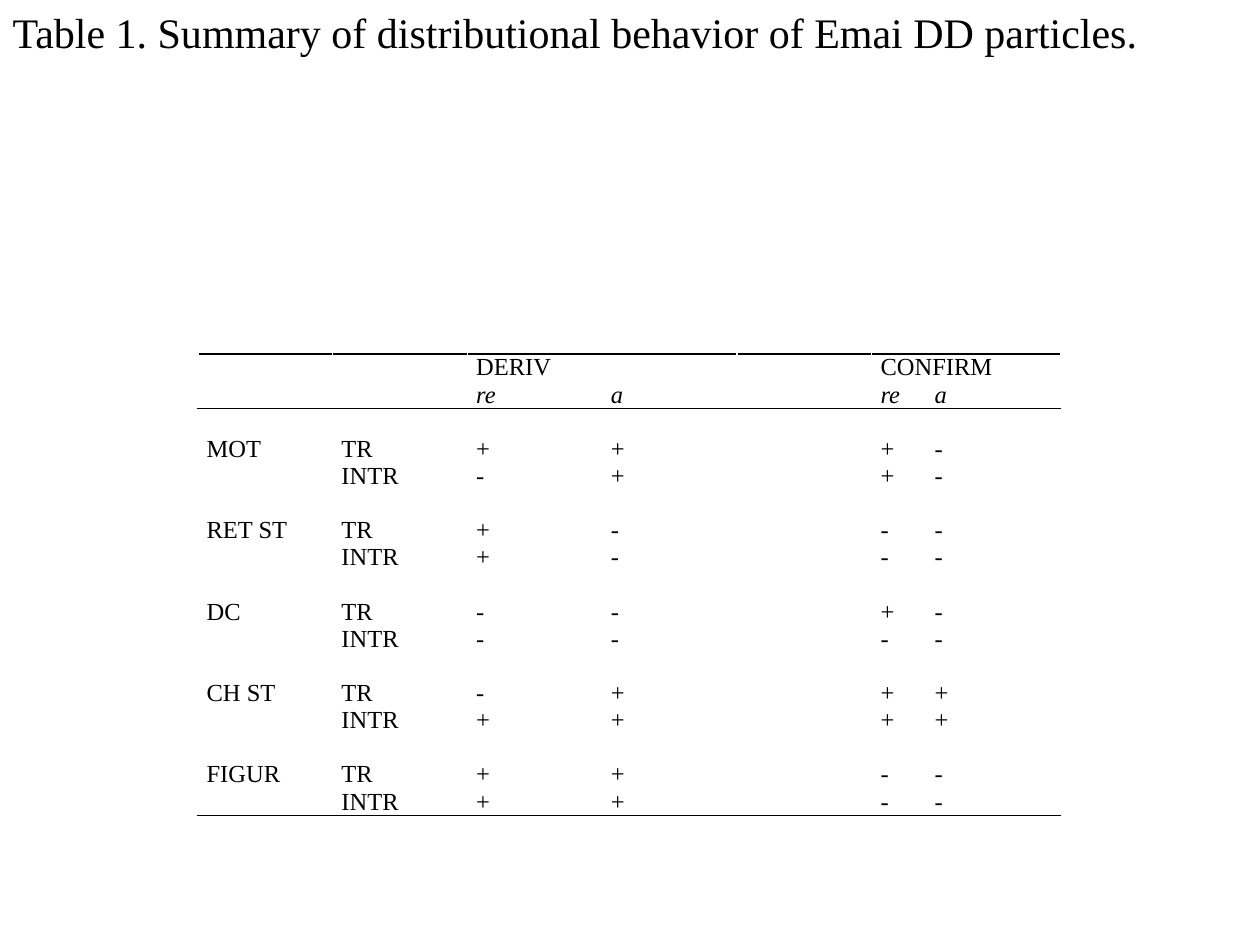
from lxml import etree
from pptx import Presentation
from pptx.dml.color import RGBColor
from pptx.oxml import ns
from pptx.util import Inches, Pt

CAPTION = "Table 1. Summary of distributional behavior of Emai DD particles."
HEADERS = [
    ("", "", "DERIV", "", "", "CONFIRM", ""),
    ("", "", "re", "a", "", "re", "a"),
]
# Verb class: (DERIV re, DERIV a, CONFIRM re, CONFIRM a) for TR, then INTR
CLASSES = [
    ("MOT", "+++-", "-++-"),
    ("RET ST", "+---", "+---"),
    ("DC", "--+-", "----"),
    ("CH ST", "-+++", "++++"),
    ("FIGUR", "++--", "++--"),
]
COLUMNS = [1.07, 1.07, 1.07, 1.07, 1.07, 0.43, 1.07]
HEADER_SPANS = [(2, 3), (5, 6)]
LEFT, TOP, HEIGHT = 1.57, 2.81, 3.66
THEME = {
    "font": "Times New Roman",
    "ink": RGBColor(0, 0, 0),
    "caption": Pt(24),
    "cell": Pt(14),
    "rule": Pt(1),
    "inset": Inches(0.07),
}


def table_rows():
    """Header rows, then a spacer, a TR and an INTR row for each class."""
    rows = list(HEADERS)
    for name, transitive, intransitive in CLASSES:
        rows.append([""] * len(COLUMNS))
        for label, kind, marks in ((name, "TR", transitive), ("", "INTR", intransitive)):
            rows.append([label, kind, *marks[:2], "", *marks[2:]])
    return rows


def style_span(span, size, italic=False):
    span.font.name = THEME["font"]
    span.font.size = size
    span.font.color.rgb = THEME["ink"]
    span.font.italic = italic


def add_rule(cell, side):
    """Draw a black line on the cell's top (lnT) or bottom (lnB)."""
    line = etree.Element(ns.qn(f"a:{side}"), w=str(THEME["rule"]))
    fill = etree.SubElement(line, ns.qn("a:solidFill"))
    etree.SubElement(fill, ns.qn("a:srgbClr"), val=str(THEME["ink"]))
    cell._tc.get_or_add_tcPr().insert(0, line)


def fill_cell(cell, words, italic):
    cell.margin_left = cell.margin_right = THEME["inset"]
    cell.margin_top = cell.margin_bottom = 0
    cell.fill.background()
    para = cell.text_frame.paragraphs[0]
    if words:
        para.text = words
        style_span(para.runs[0], THEME["cell"], italic)
    else:
        # An empty cell needs its own type size to keep the row low
        end = etree.SubElement(para._p, ns.qn("a:endParaRPr"), sz=str(int(THEME["cell"].pt * 100)))
        etree.SubElement(end, ns.qn("a:latin"), typeface=THEME["font"])


def add_caption(page):
    title, box = page.placeholders
    title._element.getparent().remove(title._element)
    box.left = box.top = 0
    box.width, box.height = Inches(10), Inches(7.5)
    box.text_frame.text = CAPTION
    para = box.text_frame.paragraphs[0]
    props = para._p.get_or_add_pPr()
    props.set("marL", "0")
    props.set("indent", "0")
    etree.SubElement(props, ns.qn("a:buNone"))
    style_span(para.runs[0], THEME["caption"])


def add_summary(page):
    rows = table_rows()
    table = page.shapes.add_table(
        len(rows), len(COLUMNS), Inches(LEFT), Inches(TOP), Inches(sum(COLUMNS)), Inches(HEIGHT)
    ).table
    table.first_row = table.horz_banding = False
    for column, width in zip(table.columns, COLUMNS):
        column.width = Inches(width)
    rules = {0: "lnT", 1: "lnB", 2: "lnT", len(rows) - 1: "lnB"}
    for r, row in enumerate(rows):
        for c, words in enumerate(row):
            cell = table.cell(r, c)
            fill_cell(cell, words, italic=r == 1)
            if r in rules:
                add_rule(cell, rules[r])
    for first, last in HEADER_SPANS:
        table.cell(0, first).merge(table.cell(0, last))


def main():
    deck = Presentation()
    deck.slide_width, deck.slide_height = Inches(10), Inches(7.5)
    page = deck.slides.add_slide(deck.slide_layouts[1])
    add_caption(page)
    add_summary(page)
    deck.save("out.pptx")


if __name__ == "__main__":
    main()
